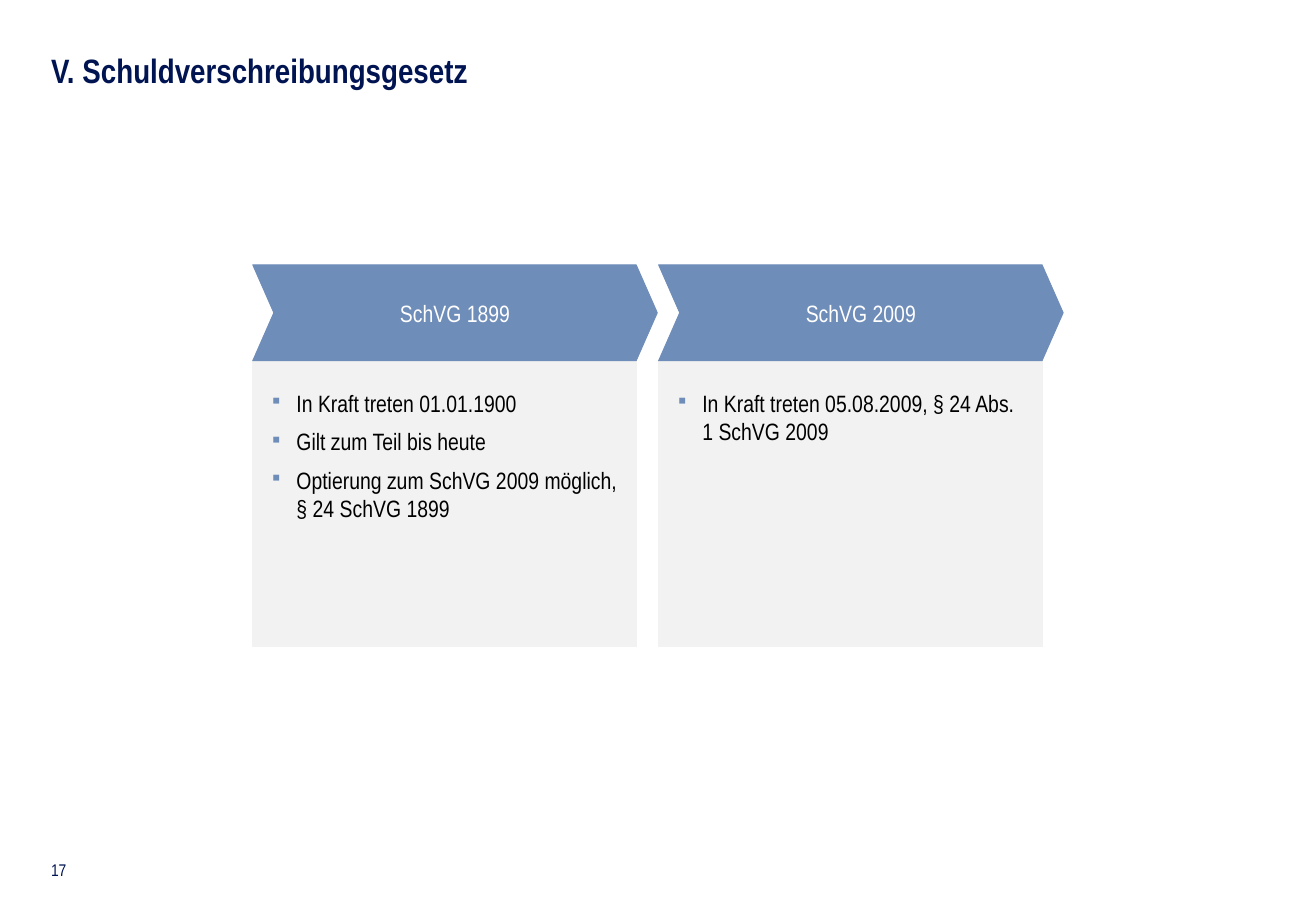
from lxml.etree import SubElement
from pptx import Presentation
from pptx.dml.color import RGBColor
from pptx.enum.shapes import MSO_SHAPE
from pptx.enum.text import MSO_ANCHOR, MSO_AUTO_SIZE, PP_ALIGN
from pptx.oxml.ns import qn
from pptx.util import Pt

PX = 9144
FONT = "Arial Narrow"
COLORS = {"navy": "001452", "blue": "6F8DB9", "gray": "F2F2F2",
          "black": "000000", "white": "FFFFFF"}
PHASES = [
    ("SchVG 1899", ["In Kraft treten 01.01.1900",
                    "Gilt zum Teil bis heute",
                    "Optierung zum SchVG 2009 möglich, § 24 SchVG 1899"]),
    ("SchVG 2009", ["In Kraft treten 05.08.2009, § 24 Abs. 1 SchVG 2009"]),
]


class Deck:
    """Holds the style and the current slide, with lengths in px of 1/100 inch."""

    def __init__(self, width, height):
        self.prs = Presentation()
        self.prs.slide_width = width * PX
        self.prs.slide_height = height * PX
        self.slide = self.prs.slides.add_slide(self.prs.slide_layouts[3])

    def color(self, name):
        return RGBColor.from_string(COLORS[name])

    def place(self, shape, box):
        shape.left, shape.top, shape.width, shape.height = [n * PX for n in box]

    def paint(self, shape, name, line):
        shape.fill.solid()
        shape.fill.fore_color.rgb = self.color(name)
        shape.line.color.rgb = self.color(name)
        shape.line.width = Pt(line)

    def frame(self, shape, insets, anchor=MSO_ANCHOR.TOP):
        frame = shape.text_frame
        frame.word_wrap = True
        frame.auto_size = MSO_AUTO_SIZE.NONE
        frame.vertical_anchor = anchor
        (frame.margin_left, frame.margin_top,
         frame.margin_right, frame.margin_bottom) = [n * PX for n in insets]
        return frame

    def style(self, para, size, color, bold=False, align=PP_ALIGN.LEFT):
        para.alignment = align
        para.font.name = FONT
        para.font.size = Pt(size)
        para.font.bold = bold
        para.font.color.rgb = self.color(color)

    def title(self, text, box):
        shape = self.slide.shapes.title
        self.place(shape, box)
        frame = self.frame(shape, (0, 5, 10, 5))
        frame.text = text
        para = frame.paragraphs[0]
        para.line_spacing = 0.9
        self.style(para, 20, "navy", bold=True)

    def label(self, text, box):
        shape = self.slide.shapes.add_textbox(*[n * PX for n in box])
        frame = self.frame(shape, (0, 5, 10, 5), MSO_ANCHOR.MIDDLE)
        frame.text = text
        self.style(frame.paragraphs[0], 10, "navy")

    def bullet(self, para):
        props = para._p.get_or_add_pPr()
        props.set("marL", str(20 * PX))
        props.set("indent", str(-20 * PX))
        tint = SubElement(props, qn("a:buClr"))
        SubElement(tint, qn("a:srgbClr"), val=COLORS["blue"])
        SubElement(props, qn("a:buFont"), typeface=FONT)
        SubElement(props, qn("a:buChar"), char="▪")

    def panel(self, index, items, box):
        shape = self.slide.placeholders[index]
        self.place(shape, box)
        self.paint(shape, "gray", 0.75)
        frame = self.frame(shape, (16, 24, 16, 16))
        frame.text = "\n".join(items)
        for row, para in enumerate(frame.paragraphs):
            self.bullet(para)
            para.space_before = Pt(6 if row else 0)
            self.style(para, 14, "black")

    def chevron(self, text, box):
        shape = self.slide.shapes.add_shape(
            MSO_SHAPE.CHEVRON, *[n * PX for n in box])
        shape.adjustments[0] = 0.22
        shape.shadow.inherit = False
        self.paint(shape, "blue", 0.5)
        frame = self.frame(shape, (0, 0, 0, 0), MSO_ANCHOR.MIDDLE)
        frame.text = text
        self.style(frame.paragraphs[0], 14, "white", align=PP_ALIGN.CENTER)

    def save(self):
        self.prs.save("out.pptx")


def main():
    deck = Deck(1083, 750)
    deck.label("17", (42, 702, 39, 28))
    deck.title("V. Schuldverschreibungsgesetz", (42, 40, 1000, 67))
    for col, (head, items) in enumerate(PHASES):
        left = 208 + col * 334
        deck.panel(col + 1, items, (left, 296, 316, 236))
        deck.chevron(head, (left, 218, 333, 79))
    deck.save()


if __name__ == "__main__":
    main()
